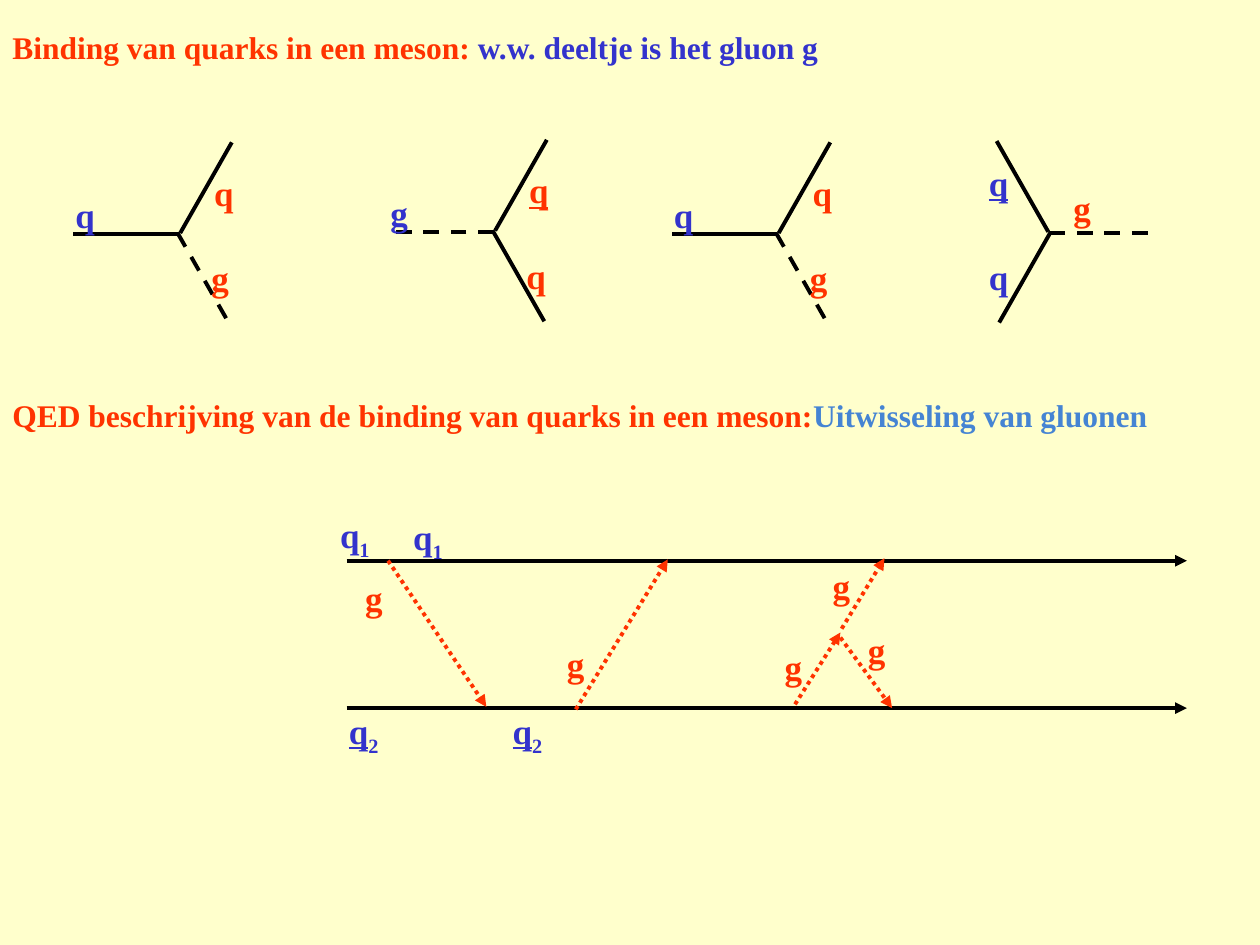
from lxml import etree
from pptx import Presentation
from pptx.dml.color import RGBColor
from pptx.enum.dml import MSO_LINE
from pptx.enum.shapes import MSO_CONNECTOR
from pptx.enum.text import MSO_ANCHOR
from pptx.oxml.ns import qn
from pptx.util import Inches, Pt

STRAIGHT = MSO_CONNECTOR.STRAIGHT
DASH, DOTS = MSO_LINE.DASH, MSO_LINE.ROUND_DOT
TOP, MIDDLE = MSO_ANCHOR.TOP, MSO_ANCHOR.MIDDLE
RED, BLUE, LIGHT_BLUE = "FF3300", "3333CC", "4584D3"
BLACK, CREAM = "000000", "FFFFCC"


def rgb(value):
    return RGBColor.from_string(value)


class Page:
    font = "Times New Roman"
    label_size, title_size = 20, 18
    line_width = 2.25

    def __init__(self, prs):
        self.s = prs.slides.add_slide(prs.slide_layouts[6])
        fill = self.s.background.fill
        fill.solid()
        fill.fore_color.rgb = rgb(CREAM)

    def text(self, x, y, w, h, parts, size, anchor=TOP, wrap=True, parent=None):
        """Each part is (text, colour, underlined, subscript)."""
        sp = (parent or self.s).shapes.add_textbox(
            Inches(x), Inches(y), Inches(w), Inches(h))
        tf = sp.text_frame
        tf.word_wrap = wrap
        tf.vertical_anchor = anchor
        for content, color, underlined, subscript in parts:
            r = tf.paragraphs[0].add_run()
            r.text = content
            r.font.name = self.font
            r.font.size = Pt(size)
            r.font.bold = True
            r.font.color.rgb = rgb(color)
            if underlined:
                r.font.underline = True
            if subscript:
                r.font._element.set("baseline", "-25000")

    def title(self, y, *parts):
        self.text(0, y, 10, 0.75, [(t, c, False, False) for t, c in parts],
                  self.title_size, MIDDLE)

    def label(self, x, y, w, name, color, anti=False, parent=None):
        self.text(x, y, w, 0.43, [(name, color, anti, False)],
                  self.label_size, parent=parent)

    def quark(self, x, y, index, anti=False):
        self.text(x, y, 0.45, 0.43,
                  [("q", BLUE, anti, False), (index, BLUE, False, True)],
                  self.label_size, wrap=False)

    def line(self, x1, y1, x2, y2, color=BLACK, dash=None, arrow=False, parent=None):
        sp = (parent or self.s).shapes.add_connector(
            STRAIGHT, Inches(x1), Inches(y1), Inches(x2), Inches(y2))
        sp.line.color.rgb = rgb(color)
        sp.line.width = Pt(self.line_width)
        if dash:
            sp.line.dash_style = dash
        if arrow:
            etree.SubElement(sp.line._get_or_add_ln(), qn("a:tailEnd"), type="triangle")
        etree.SubElement(sp._element.spPr, qn("a:effectLst"))

    def vertex(self, x, y, direction, gluon, labels):
        """Three legs (side, up, down) meeting at x, y; labels in the same order."""
        group = self.s.shapes.add_group_shape()
        legs = [(0, 0.01, -0.84, 0.01), (0.01, 0, 0.42, -0.72), (-0.01, 0, 0.4, 0.72)]
        for i, (x1, y1, x2, y2) in enumerate(legs):
            self.line(x + direction * x1, y + y1, x + direction * x2, y + y2,
                      dash=DASH if i == gluon else None, parent=group)
        places = LABEL_PLACES[direction]
        for (dx, dy, w), (name, color, anti) in zip(places, labels):
            self.label(x + dx, y + dy, w, name, color, anti, group)


# Label offsets from the vertex and widths: side, up, down
LABEL_PLACES = {
    1: [(-0.92, -0.36, 0.86), (0.18, -0.54, 0.71), (0.16, 0.14, 0.56)],
    -1: [(0.09, -0.41, 0.83), (-0.58, -0.61, 0.86), (-0.58, 0.14, 0.64)],
}
SIDE, DOWN = 0, 2
EMISSION = [("q", BLUE, False), ("q", RED, False), ("g", RED, False)]
CREATION = [("g", BLUE, False), ("q", RED, True), ("q", RED, False)]
ANNIHILATION = [("g", RED, False), ("q", BLUE, True), ("q", BLUE, False)]


def main():
    prs = Presentation()
    prs.slide_width, prs.slide_height = Inches(10), Inches(7.5)
    page = Page(prs)

    # Headings
    page.title(0, ("Binding van quarks in een meson: ", RED),
               ("w.w. deeltje is het gluon g", BLUE))
    page.title(2.92, ("QED beschrijving van de binding van quarks in een meson:", RED),
               ("Uitwisseling van gluonen", LIGHT_BLUE))

    # Basic vertices
    page.vertex(1.42, 1.85, 1, DOWN, EMISSION)
    page.vertex(3.92, 1.83, 1, SIDE, CREATION)
    page.vertex(6.17, 1.85, 1, DOWN, EMISSION)
    page.vertex(8.33, 1.84, -1, SIDE, ANNIHILATION)

    # Quark lines
    for y in (4.45, 5.62):
        page.line(2.75, y, 9.42, y, arrow=True)
    page.quark(2.6, 4.03, "1")
    page.quark(3.18, 4.04, "1")
    page.quark(2.67, 5.58, "2", anti=True)
    page.quark(3.97, 5.58, "2", anti=True)

    # Exchanged gluons
    gluons = [
        (3.08, 4.45, 3.86, 5.61), (4.57, 5.63, 5.3, 4.44), (6.67, 5.06, 7.08, 5.62),
        (6.31, 5.59, 6.67, 5.02), (6.68, 4.99, 7.02, 4.43),
    ]
    for ends in gluons:
        page.line(*ends, color=RED, dash=DOTS, arrow=True)
    for x, y in [(2.8, 4.53), (4.4, 5.05), (6.51, 4.43), (6.13, 5.07), (6.79, 4.94)]:
        page.label(x, y, 0.53, "g", RED)

    prs.save("out.pptx")


if __name__ == "__main__":
    main()
